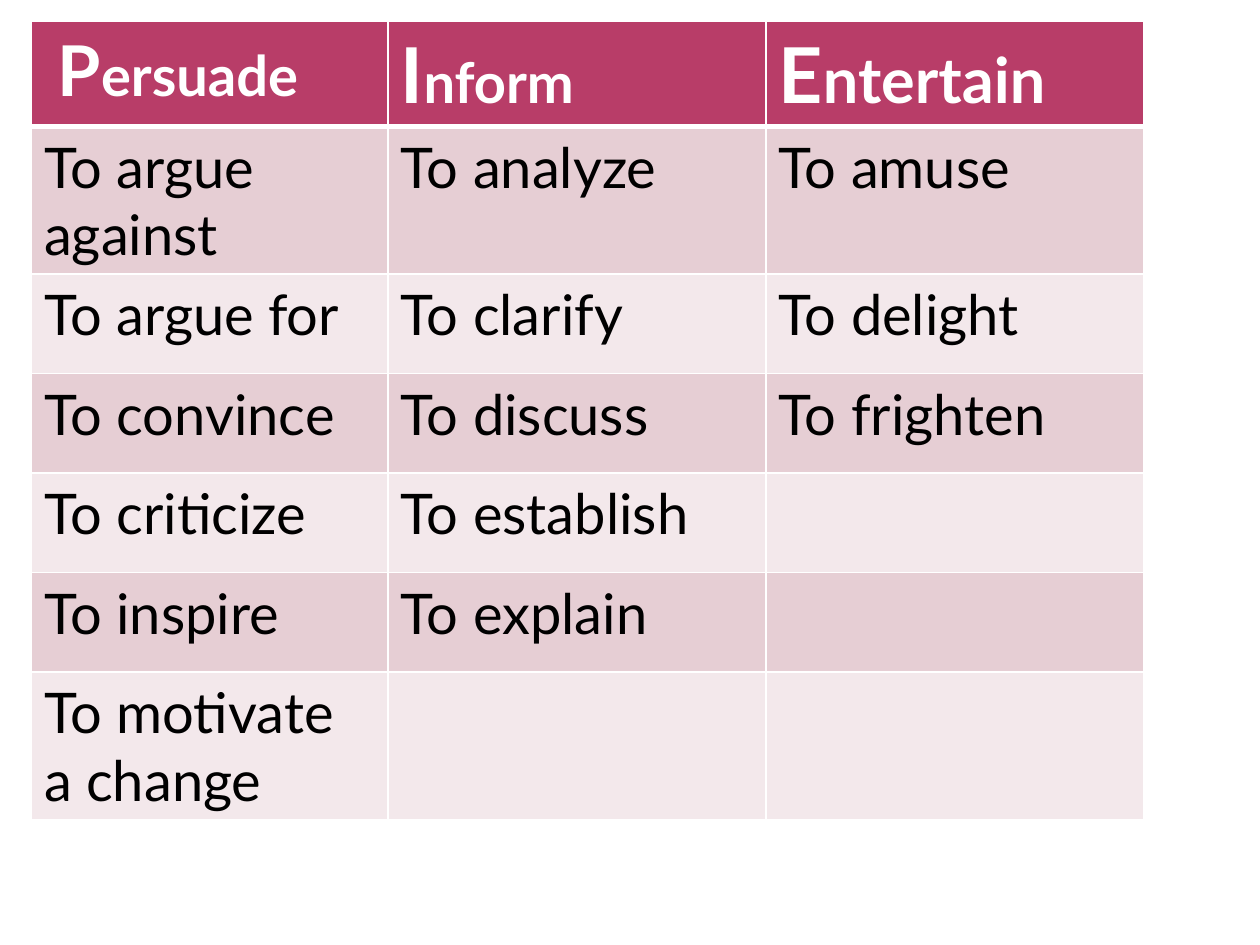
import lxml.etree
import pptx
import pptx.dml.color
import pptx.oxml.ns
import pptx.util

Inches, Pt = pptx.util.Inches, pptx.util.Pt

FONT = "Lato"
WHITE, BLACK = "FFFFFF", "000000"
HEADER_FILL = "B83D68"
BAND_FILLS = ["E6CED4", "F3E8EB"]
COLUMN_WIDTHS = [2.83, 3, 3]
ROW_HEIGHT = 0.79

# Each heading is a list of (text, size) runs.
HEADINGS = [
    [(" ", 32), ("P", 40), ("ersuade", 32)],
    [("I", 44), ("nform", 32)],
    [("E", 44), ("ntertain", 36)],
]
PURPOSES = [
    ["To argue against", "To analyze", "To amuse"],
    ["To argue for", "To clarify", "To delight"],
    ["To convince", "To discuss", "To frighten"],
    ["To criticize", "To establish", ""],
    ["To inspire", "To explain", ""],
    ["To motivate a change", "", ""],
]


def rgb(color):
    return pptx.dml.color.RGBColor.from_string(color)


def add_text(p, text, size=32, color=BLACK, bold=False):
    r = p.add_run()
    r.text = text
    r.font.name = FONT
    r.font.size = Pt(size)
    r.font.bold = bold
    r.font.color.rgb = rgb(color)


def add_border(cell, side, width, color=WHITE):
    """Draw one cell edge; side is L, R, T or B, in that order."""
    qn = pptx.oxml.ns.qn
    tc_pr = cell._tc.get_or_add_tcPr()
    ln = lxml.etree.SubElement(tc_pr, qn("a:ln" + side), w=str(Pt(width)))
    fill = lxml.etree.SubElement(ln, qn("a:solidFill"))
    lxml.etree.SubElement(fill, qn("a:srgbClr"), val=color)


def format_cell(cell, fill, top=1, bottom=1):
    """Set borders before the fill, as the file format orders them."""
    for side, width in (("L", 1), ("R", 1), ("T", top), ("B", bottom)):
        add_border(cell, side, width)
    cell.fill.solid()
    cell.fill.fore_color.rgb = rgb(fill)


def add_purpose_table(s):
    rows = len(PURPOSES) + 1
    table = s.shapes.add_table(
        rows, len(COLUMN_WIDTHS), Inches(0.25), Inches(0.17),
        Inches(sum(COLUMN_WIDTHS)), Inches(rows * ROW_HEIGHT)).table
    for column, width in zip(table.columns, COLUMN_WIDTHS):
        column.width = Inches(width)
    for row in table.rows:
        row.height = Inches(ROW_HEIGHT)

    for col, runs in enumerate(HEADINGS):
        cell = table.cell(0, col)
        format_cell(cell, HEADER_FILL, bottom=3)
        for text, size in runs:
            add_text(cell.text_frame.paragraphs[0], text, size=size,
                     color=WHITE, bold=True)

    for row, purposes in enumerate(PURPOSES, start=1):
        for col, text in enumerate(purposes):
            cell = table.cell(row, col)
            format_cell(cell, BAND_FILLS[(row - 1) % 2],
                        top=3 if row == 1 else 1)
            if text:
                add_text(cell.text_frame.paragraphs[0], text)


def main():
    prs = pptx.Presentation()
    prs.slide_width, prs.slide_height = Inches(10), Inches(7.5)
    s = prs.slides.add_slide(prs.slide_layouts[6])
    add_purpose_table(s)
    prs.save("out.pptx")


if __name__ == "__main__":
    main()
